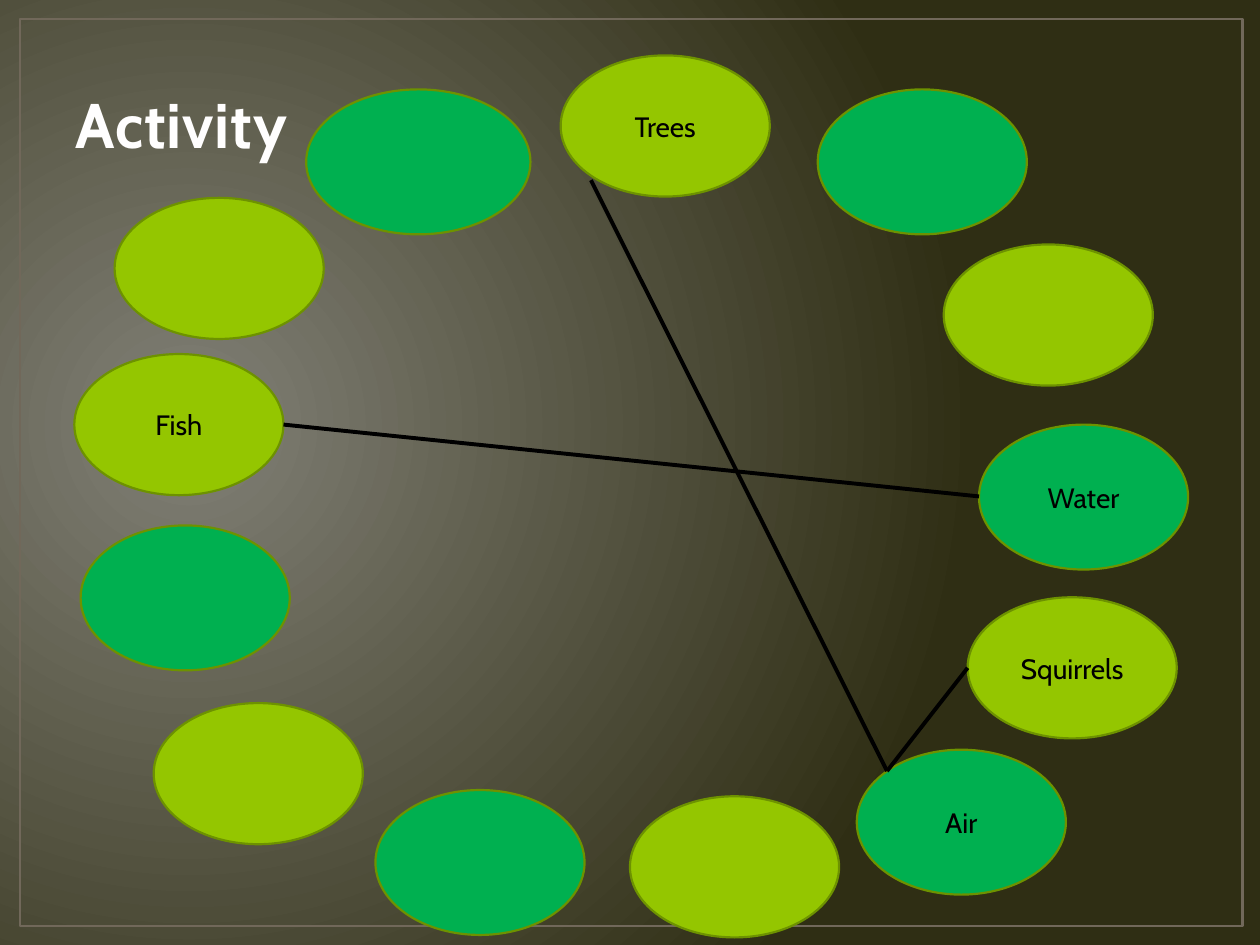
from typing import NamedTuple

from lxml import etree
from pptx import Presentation
from pptx.dml.color import RGBColor
from pptx.enum.shapes import MSO_CONNECTOR, MSO_SHAPE
from pptx.enum.text import MSO_ANCHOR, PP_ALIGN
from pptx.oxml.ns import qn
from pptx.slide import Slide
from pptx.util import Inches, Pt

OVAL = MSO_SHAPE.OVAL
RECTANGLE = MSO_SHAPE.RECTANGLE
STRAIGHT = MSO_CONNECTOR.STRAIGHT
BOTTOM = MSO_ANCHOR.BOTTOM
MIDDLE = MSO_ANCHOR.MIDDLE
CENTER = PP_ALIGN.CENTER
LEFT = PP_ALIGN.LEFT

FONT = "Cabin"
LIME = "94C600"
GREEN = "00B050"
OLIVE = "6D9200"
BLACK = "000000"
HEIGHTS = {LIME: 1.12, GREEN: 1.15}


class Bubble(NamedTuple):
    left: float
    top: float
    color: str
    label: str = ""
    width: float = 1.66


class Link(NamedTuple):
    start: tuple[float, float]
    end: tuple[float, float]


BUBBLES = [
    Bubble(0.91, 1.57, LIME),
    Bubble(2.43, 0.71, GREEN, width=1.78),
    Bubble(7.49, 1.94, LIME),
    Bubble(7.68, 4.74, LIME, "Squirrels"),
    Bubble(5, 6.32, LIME),
    Bubble(1.22, 5.58, LIME),
    Bubble(4.45, 0.44, LIME, "Trees"),
    Bubble(0.59, 2.81, LIME, "Fish"),
    Bubble(6.49, 0.71, GREEN),
    Bubble(6.8, 5.95, GREEN, "Air"),
    Bubble(2.98, 6.27, GREEN),
    Bubble(7.77, 3.37, GREEN, "Water"),
    Bubble(0.64, 4.17, GREEN),
]

AIR_CORNER = (7.04, 6.12)
LINKS = [
    Link(AIR_CORNER, (4.69, 1.43)),
    Link(AIR_CORNER, (7.68, 5.3)),
    Link((2.25, 3.37), (7.77, 3.94)),
]


def rgb(value: str) -> RGBColor:
    return RGBColor.from_string(value)


def paint_background(slide: Slide) -> None:
    fill = slide.background.fill
    fill.gradient()
    for stop, color in zip(fill.gradient_stops, ("818076", "2F2E14")):
        stop.color.rgb = rgb(color)
    gradient = slide.element.find(".//" + qn("a:gradFill"))
    gradient.remove(gradient.find(qn("a:lin")))
    circle = etree.SubElement(gradient, qn("a:path"), {"path": "circle"})
    focus = {"l": "15000", "t": "50000", "r": "85000", "b": "60000"}
    etree.SubElement(circle, qn("a:fillToRect"), focus)


def draw_frame(slide: Slide) -> None:
    frame = slide.shapes.add_shape(
        RECTANGLE, Inches(0.16), Inches(0.15), Inches(9.7), Inches(7.2))
    frame.shadow.inherit = False
    frame.fill.background()
    frame.line.color.rgb = rgb("71685A")
    frame.line.width = Pt(1.5)


def write_title(slide: Slide, wording: str) -> None:
    title = slide.shapes.title
    title.left, title.top = Inches(0.5), Inches(0.08)
    title.width, title.height = Inches(9), Inches(1.25)
    title.text_frame.text = wording
    title.text_frame.vertical_anchor = BOTTOM
    heading = title.text_frame.paragraphs[0]
    heading.alignment = LEFT
    heading.font.name = FONT
    heading.font.size = Pt(36)
    heading.font.bold = True
    heading.font.color.rgb = rgb("FFFEFE")
    heading.runs[0].font._element.set("spc", "50")


def draw_bubble(slide: Slide, bubble: Bubble) -> None:
    oval = slide.shapes.add_shape(
        OVAL, Inches(bubble.left), Inches(bubble.top),
        Inches(bubble.width), Inches(HEIGHTS[bubble.color]))
    oval.shadow.inherit = False
    oval.fill.solid()
    oval.fill.fore_color.rgb = rgb(bubble.color)
    oval.line.color.rgb = rgb(OLIVE)
    oval.line.width = Pt(1.25)
    if bubble.label:
        oval.text_frame.text = bubble.label
        oval.text_frame.vertical_anchor = MIDDLE
        label = oval.text_frame.paragraphs[0]
        label.alignment = CENTER
        label.font.name = FONT
        label.font.size = Pt(16)
        label.font.color.rgb = rgb(BLACK)


def draw_link(slide: Slide, link: Link) -> None:
    ends = [Inches(value) for value in link.start + link.end]
    line = slide.shapes.add_connector(STRAIGHT, *ends)
    line.line.color.rgb = rgb(BLACK)
    line.line.width = Pt(2.25)
    properties = line.element.find(qn("p:spPr"))
    etree.SubElement(properties, qn("a:effectLst"))


def main() -> None:
    deck = Presentation()
    deck.slide_width, deck.slide_height = Inches(10), Inches(7.5)
    slide = deck.slides.add_slide(deck.slide_layouts[5])
    paint_background(slide)
    draw_frame(slide)
    write_title(slide, "Activity")
    for bubble in BUBBLES:
        draw_bubble(slide, bubble)
    for link in LINKS:
        draw_link(slide, link)
    deck.save("out.pptx")


if __name__ == "__main__":
    main()
